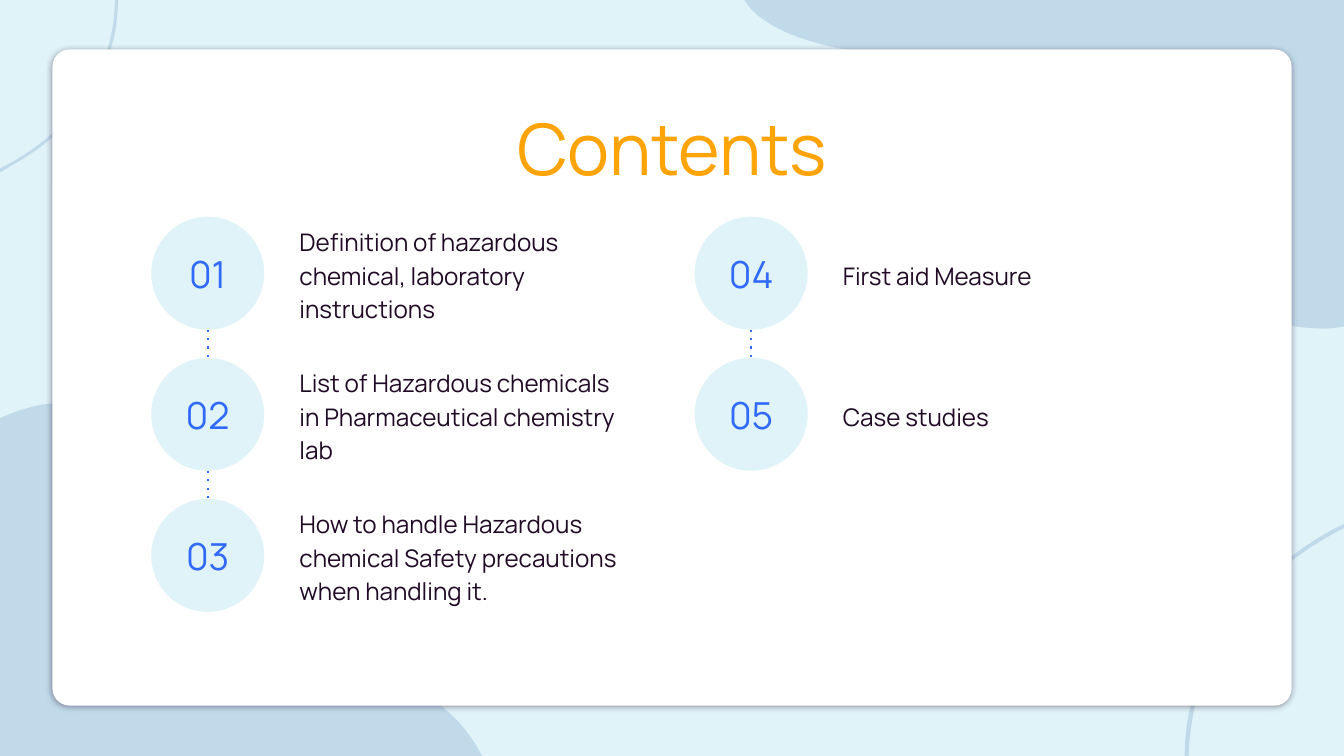
from dataclasses import dataclass

from lxml import etree
from pptx import Presentation
from pptx import util as u
from pptx.dml.color import RGBColor
from pptx.enum import shapes, text
from pptx.oxml import ns


@dataclass(frozen=True)
class Theme:
    """Colours, font and type sizes of the slide."""
    pale: str = "DFF3F8"
    wave: str = "A0BFDB"
    card: str = "FFFFFF"
    title: str = "FFA406"
    ink: str = "210A26"
    blue: str = "3169F8"
    font: str = "Manrope"
    head: float = 50.67
    num: float = 26.67
    body: float = 17.33


THEME = Theme()
DOT, GAP = 1.12, 1.4
TOP, LEFT, PITCH = 2.15, 1.5, 5.39
COLUMNS = [
    ["Definition of hazardous chemical, laboratory instructions",
     "List of Hazardous chemicals in Pharmaceutical chemistry lab",
     "How to handle Hazardous chemical Safety precautions when handling it."],
    ["First aid Measure", "Case studies"],
]
WAVES = [
    [(11.79, 7.5), (11.8, 7.02, 11.96, 6.53, 12.25, 6.14),
     (12.53, 5.75, 12.91, 5.45, 13.33, 5.24), (13.33, 5.2),
     (13.29, 5.22, 13.24, 5.24, 13.19, 5.27),
     (12.85, 5.46, 12.53, 5.72, 12.28, 6.03),
     (12.03, 6.36, 11.85, 6.73, 11.78, 7.14),
     (11.76, 7.26, 11.75, 7.38, 11.75, 7.5)],
    [(0.6, 4), (0.29, 4, 0, 4.15, 0, 4.15), (0, 7.5), (4.78, 7.5),
     (4.17, 6.29, 2.28, 6.52, 1.49, 6.28),
     (0.71, 6.05, 1.57, 4.89, 1.15, 4.27), (1, 4.06, 0.8, 4, 0.6, 4)],
    [(7.38, 0), (7.6, 0.35, 8.32, 0.58, 9.49, 0.58),
     (9.53, 0.58, 9.58, 0.58, 9.62, 0.58),
     (9.64, 0.58, 9.65, 0.58, 9.67, 0.58),
     (11.42, 0.58, 10.69, 2.13, 11.99, 2.94),
     (12.34, 3.16, 12.79, 3.26, 13.14, 3.26),
     (13.21, 3.26, 13.27, 3.25, 13.33, 3.24), (13.33, 0)],
    [(1.14, 0), (1.14, 0.36, 1.02, 0.72, 0.81, 1.01),
     (0.6, 1.29, 0.31, 1.52, 0, 1.67), (0, 1.71),
     (0.04, 1.69, 0.07, 1.67, 0.1, 1.65),
     (0.36, 1.51, 0.6, 1.32, 0.78, 1.09),
     (0.97, 0.85, 1.1, 0.57, 1.15, 0.27),
     (1.16, 0.18, 1.17, 0.09, 1.17, 0)],
]


def paint(shape, color):
    """Give a shape a flat fill without line or shadow."""
    shape.shadow.inherit = False
    shape.fill.solid()
    shape.fill.fore_color.rgb = RGBColor.from_string(color)
    shape.line.fill.background()


def fade(node, percent):
    """Set the opacity of the first colour in an element."""
    color = next(node.iter(ns.qn("a:srgbClr")))
    etree.SubElement(color, ns.qn("a:alpha"), val=str(percent * 1000))


def bend(wave, parts):
    """Turn the sides that have control points into cubic curves."""
    sides = list(wave._element.spPr.iter(ns.qn("a:lnTo")))
    for side, part in zip(sides, parts):
        if len(part) == 2:
            continue
        curve = etree.Element(ns.qn("a:cubicBezTo"))
        for x, y in zip(part[::2], part[1::2]):
            etree.SubElement(curve, ns.qn("a:pt"),
                             x=str(u.Inches(x) - wave.left),
                             y=str(u.Inches(y) - wave.top))
        side.getparent().replace(side, curve)


def add_wave(slide, outline):
    """Draw one translucent background wave."""
    points = [(u.Inches(part[-2]), u.Inches(part[-1])) for part in outline]
    pen = slide.shapes.build_freeform(*points[0])
    pen.add_line_segments(points[1:], close=True)
    wave = pen.convert_to_shape()
    bend(wave, outline[1:])
    paint(wave, THEME.wave)
    fade(wave._element.spPr, 48)


def add_card(slide):
    """Draw the rounded white card with its soft shadow."""
    card = slide.shapes.add_shape(
        shapes.MSO_SHAPE.ROUNDED_RECTANGLE, u.Inches(0.52), u.Inches(0.49),
        u.Inches(12.29), u.Inches(6.51))
    card.adjustments[0] = 0.026
    paint(card, THEME.card)
    effects = card._element.spPr.find(ns.qn("a:effectLst"))
    shade = etree.SubElement(
        effects, ns.qn("a:outerShdw"), blurRad=str(u.Pt(4.5)),
        dist=str(u.Pt(1.5)), dir="5400000", algn="bl", rotWithShape="0")
    etree.SubElement(shade, ns.qn("a:srgbClr"), val=THEME.ink)
    fade(shade, 50)


def write(shape, words, size, color, align, anchor, space=None):
    """Put one styled paragraph into a shape."""
    frame = shape.text_frame
    frame.word_wrap = True
    frame.vertical_anchor = anchor
    frame.margin_left = frame.margin_right = u.Inches(0.13)
    frame.margin_top = frame.margin_bottom = u.Inches(0.13)
    para = frame.paragraphs[0]
    para.text = words
    para.alignment = align
    para.line_spacing = space
    para.font.name = THEME.font
    para.font.size = u.Pt(size)
    para.font.color.rgb = RGBColor.from_string(color)


def add_title(slide, words):
    """Add the centred heading."""
    box = slide.shapes.add_textbox(
        u.Inches(1.04), u.Inches(0.78), u.Inches(11.25), u.Inches(1.04))
    write(box, words, THEME.head, THEME.title, text.PP_ALIGN.CENTER,
          text.MSO_ANCHOR.TOP, 1.15)


def add_item(slide, left, top, label, words):
    """Add a numbered circle and its topic."""
    box = slide.shapes.add_textbox(
        u.Inches(left + 1.34), u.Inches(top), u.Inches(3.61), u.Inches(DOT))
    write(box, words, THEME.body, THEME.ink, text.PP_ALIGN.LEFT,
          text.MSO_ANCHOR.MIDDLE, 1.15)
    box.text_frame.margin_right = u.Inches(0.22)
    dot = slide.shapes.add_shape(
        shapes.MSO_SHAPE.OVAL, u.Inches(left), u.Inches(top),
        u.Inches(DOT), u.Inches(DOT))
    paint(dot, THEME.pale)
    write(dot, label, THEME.num, THEME.blue, text.PP_ALIGN.CENTER,
          text.MSO_ANCHOR.MIDDLE)


def add_link(slide, left, top):
    """Add the dotted line from one circle to the next."""
    mid = u.Inches(left + DOT / 2)
    link = slide.shapes.add_connector(
        shapes.MSO_CONNECTOR.STRAIGHT, mid, u.Inches(top + DOT),
        mid, u.Inches(top + GAP))
    link.line.color.rgb = RGBColor.from_string(THEME.blue)
    link.line.width = u.Pt(1.5)
    frame = link._element.spPr
    etree.SubElement(frame.find(ns.qn("a:ln")), ns.qn("a:prstDash"),
                     val="dot")
    etree.SubElement(frame, ns.qn("a:effectLst"))


def main():
    """Build and save the contents slide."""
    deck = Presentation()
    deck.slide_width, deck.slide_height = u.Inches(13.33), u.Inches(7.5)
    slide = deck.slides.add_slide(deck.slide_layouts[6])
    slide.background.fill.solid()
    slide.background.fill.fore_color.rgb = RGBColor.from_string(THEME.pale)
    for outline in WAVES:
        add_wave(slide, outline)
    add_card(slide)
    add_title(slide, "Contents")
    spots = [(LEFT + col * PITCH, TOP + row * GAP, row, words)
             for col, topics in enumerate(COLUMNS)
             for row, words in enumerate(topics)]
    for count, (left, top, _, words) in enumerate(spots, 1):
        add_item(slide, left, top, f"{count:02}", words)
    for left, top, row, _ in spots:
        if row:
            add_link(slide, left, top - GAP)
    deck.save("out.pptx")


if __name__ == "__main__":
    main()
